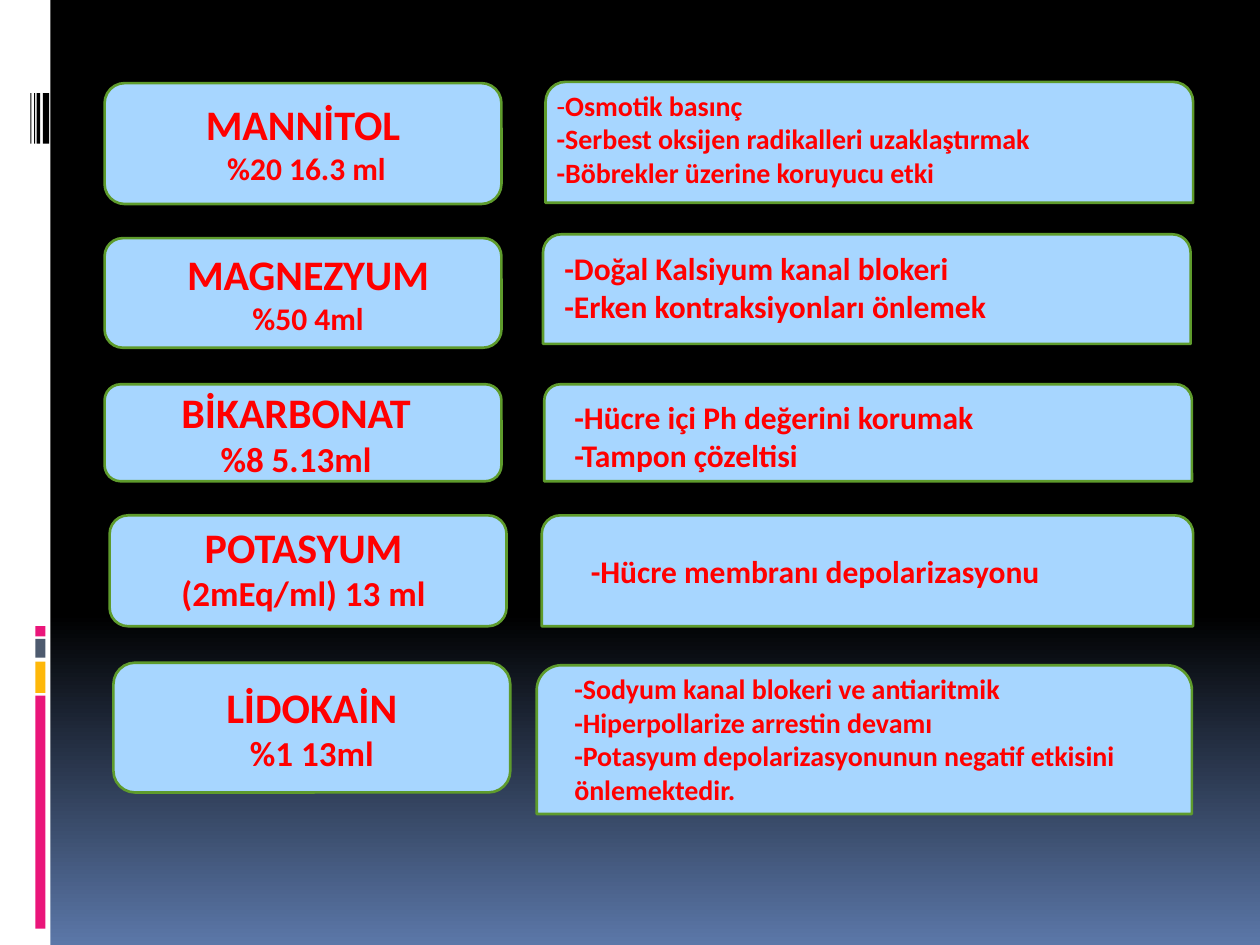
import copy
from dataclasses import dataclass

import pptx
import pptx.dml.color
import pptx.enum.shapes
import pptx.enum.text
import pptx.util

COLUMNS, ROWS = 100, 75
CELL = pptx.util.Inches(0.1)
FONT = "Calibri"
COLORS = {
    "night": "000000", "dusk": "5B77A8", "band": "FFFFFF", "pink": "EA157A",
    "amber": "FEB80A", "slate": "4E5B6F", "card": "A7D6FF", "edge": "5E9B2C",
    "text": "FF0000",
}
SHAPES = pptx.enum.shapes.MSO_SHAPE
ALIGN = pptx.enum.text.PP_ALIGN
ANCHOR = pptx.enum.text.MSO_ANCHOR


@dataclass
class Drug:
    """One row: a named dose on the left and its effects on the right."""
    name: str
    dose: str
    dose_size: int
    card: tuple
    label: tuple
    panel: tuple
    notes: tuple
    effects: list
    effect_size: int


DRUGS = [
    Drug("MANNİTOL", " %20 16.3 ml", 18,
         (8.3, 6.6, 31.5, 9.6), (9.3, 7.3, 29.5, 8.1),
         (43.3, 6.5, 51.4, 9.6), (43.2, 6.5, 51.6, 9.1),
         ["Osmotik basınç", "-Serbest oksijen radikalleri uzaklaştırmak",
          "-Böbrekler üzerine koruyucu etki"], 16),
    Drug("MAGNEZYUM", "%50 4ml", 18,
         (8.3, 18.9, 31.5, 8.7), (10.4, 19.2, 28.1, 8.1),
         (43.1, 18.6, 51.4, 8.7), (43.8, 19.3, 48.8, 7.1),
         ["-Doğal Kalsiyum kanal blokeri", "-Erken kontraksiyonları önlemek"], 18),
    Drug("BİKARBONAT", "%8 5.13ml", 20,
         (8.3, 30.5, 31.5, 7.7), (12.1, 30.2, 22.8, 8.4),
         (43.2, 30.5, 51.4, 7.7), (44.6, 31.1, 45.7, 7.1),
         ["-Hücre içi Ph değerini korumak", "-Tampon çözeltisi"], 18),
    Drug("POTASYUM", "(2mEq/ml) 13 ml", 20,
         (8.7, 40.9, 31.5, 8.8), (10.8, 40.9, 26.6, 11.8),
         (43, 40.9, 51.7, 8.8), (45.9, 43.3, 40.9, 4),
         ["-Hücre membranı depolarizasyonu"], 18),
    Drug("LİDOKAİN", "%1 13ml", 20,
         (9, 52.6, 31.5, 10.3), None,
         (42.6, 52.8, 52, 11.8), (44.6, 52.8, 45.7, 11.8),
         ["-Sodyum kanal blokeri ve antiaritmik", "-Hiperpollarize arrestin devamı",
          "-Potasyum depolarizasyonunun negatif etkisini önlemektedir."], 16),
]


def color(key):
    """Return the named colour."""
    return pptx.dml.color.RGBColor.from_string(COLORS[key])


def place(box):
    """Turn columns and rows of the grid into slide lengths."""
    return [round(cells * CELL) for cells in box]


def add_block(slide, box, fill, kind=SHAPES.RECTANGLE, edge=None):
    """Add a filled preset shape, outlined when an edge colour is given."""
    block = slide.shapes.add_shape(kind, *place(box))
    block.shadow.inherit = False
    block.fill.solid()
    block.fill.fore_color.rgb = color(fill)
    if edge:
        block.line.color.rgb = color(edge)
        block.line.width = pptx.util.Pt(1.5)
    else:
        block.line.fill.background()
    return block


def add_frame(slide, box):
    """Add an empty text box and return its text frame."""
    return slide.shapes.add_textbox(*place(box)).text_frame


def write(paragraph, text, size, bold=True, align=ALIGN.LEFT):
    """Append a formatted run to a paragraph."""
    paragraph.alignment = align
    run = paragraph.add_run()
    run.text = text
    run.font.name = FONT
    run.font.size = pptx.util.Pt(size)
    run.font.bold = bold
    run.font.color.rgb = color("text")


def write_lines(frame, lines, anchor=ANCHOR.TOP, align=ALIGN.LEFT):
    """Write pairs of text and size as the paragraphs of a frame."""
    frame.word_wrap = True
    frame.vertical_anchor = anchor
    for index, (text, size) in enumerate(lines):
        paragraph = frame.add_paragraph() if index else frame.paragraphs[0]
        if not index and align == ALIGN.LEFT and not text.startswith("-"):
            write(paragraph, "-", size, bold=False)
        write(paragraph, text, size, align=align)


def paint_background(slide):
    """Fade the background from black to blue below its middle."""
    fill = slide.background.fill
    fill.gradient()
    fill.gradient_angle = 270
    stop_list = slide.element.xpath(".//p:bg//a:gsLst")[0]
    stop_list.insert(1, copy.deepcopy(stop_list[0]))
    fades = [(0, "night"), (0.65, "night"), (1, "dusk")]
    for stop, (position, key) in zip(fill.gradient_stops, fades):
        stop.position = position
        stop.color.rgb = color(key)


def add_side_band(slide):
    """Add the white band with its coloured bars and black stripes."""
    add_block(slide, (0, 0, 4, ROWS), "band")
    for top, height, key in [(55.2, 18.5, "pink"), (52.5, 2.5, "amber"),
                             (50.7, 1.5, "slate"), (49.7, 0.8, "pink")]:
        add_block(slide, (2.8, top, 0.8, height), key)
    for left, width in [(3.4, 0.5), (2.9, 0.3), (2.7, 0.1), (2.4, 0.1)]:
        add_block(slide, (left, 7.4, width, 4), "night")


def add_drug(slide, drug):
    """Add the dose card and the effect panel of one drug."""
    card = add_block(slide, drug.card, "card", SHAPES.ROUNDED_RECTANGLE, "edge")
    add_block(slide, drug.panel, "card", SHAPES.ROUND_2_SAME_RECTANGLE, "edge")
    label = add_frame(slide, drug.label) if drug.label else card.text_frame
    write_lines(label, [(drug.name, 24), (drug.dose, drug.dose_size)],
                ANCHOR.TOP if drug.label else ANCHOR.MIDDLE, ALIGN.CENTER)
    write_lines(add_frame(slide, drug.notes),
                [(effect, drug.effect_size) for effect in drug.effects])


def main():
    """Build and save the slide."""
    deck = pptx.Presentation()
    deck.slide_width, deck.slide_height = COLUMNS * CELL, ROWS * CELL
    slide = deck.slides.add_slide(deck.slide_layouts[6])
    paint_background(slide)
    add_side_band(slide)
    for drug in DRUGS:
        add_drug(slide, drug)
    deck.save("out.pptx")


if __name__ == "__main__":
    main()
